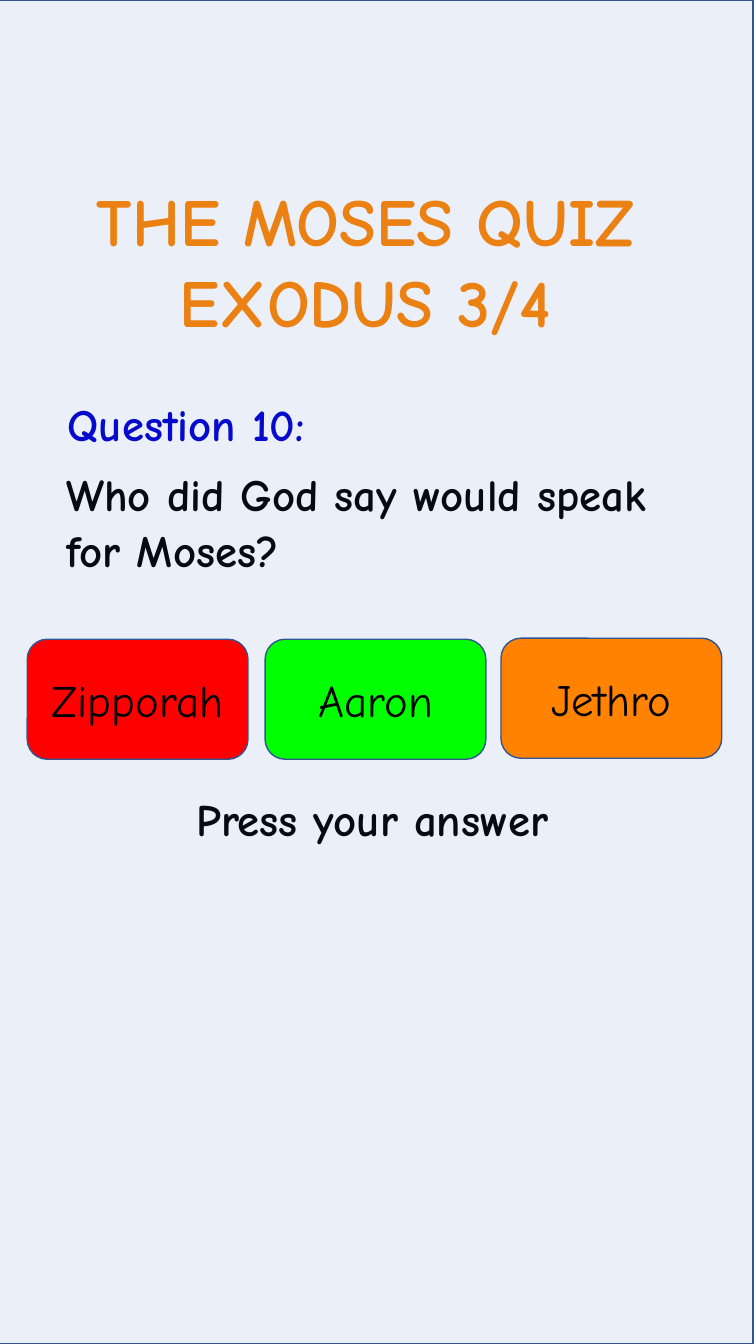
from lxml import etree
from pptx import Presentation
from pptx.dml.color import RGBColor
from pptx.enum.shapes import MSO_SHAPE
from pptx.enum.text import MSO_ANCHOR, PP_ALIGN
from pptx.oxml.ns import qn
from pptx.util import Inches, Pt

LEFT, CENTER = PP_ALIGN.LEFT, PP_ALIGN.CENTER
TOP, MIDDLE = MSO_ANCHOR.TOP, MSO_ANCHOR.MIDDLE
RECTANGLE, ROUNDED = MSO_SHAPE.RECTANGLE, MSO_SHAPE.ROUNDED_RECTANGLE

BLACK = RGBColor(0x00, 0x00, 0x00)
RED = RGBColor(0xFF, 0x00, 0x00)
GREEN = RGBColor(0x00, 0xFF, 0x00)
ORANGE = RGBColor(0xFF, 0x82, 0x00)
BLUE = RGBColor(0x00, 0x00, 0xCC)
TINT = RGBColor(0x44, 0x72, 0xC4)
BORDER = RGBColor(0x32, 0x54, 0x91)
FONT = "Comic Neue"

# Content
PAGE_SIZE = (7.5, 13.33)
TITLE = ["THE MOSES QUIZ ", "EXODUS 3/4 "]
QUESTION_LABEL = ["Question 10:"]
QUESTION = ["Who did God say would speak for Moses?"]
PROMPT = ["Press your answer"]
ANSWERS = [("Zipporah", RED, 0.27, 6.34), ("Aaron", GREEN, 2.63, 6.34),
           ("Jethro", ORANGE, 4.97, 6.33)]
ANSWER_SIZE = (2.19, 1.19)


def write(shape, lines, size=32, color=BLACK, bold=True, align=LEFT,
          anchor=TOP, wrap=True, spacing=None, before=0):
    frame = shape.text_frame
    frame.word_wrap = wrap
    frame.vertical_anchor = anchor
    for index, line in enumerate(lines):
        para = frame.add_paragraph() if index else frame.paragraphs[0]
        para.alignment = align
        para.space_before = Pt(before)
        if spacing is not None:
            para.line_spacing = spacing
        span = para.add_run()
        span.text = line
        span.font.name = FONT
        span.font.size = Pt(size)
        span.font.bold = bold
        span.font.color.rgb = color


def add_text(page, area, lines, **style):
    box = page.shapes.add_textbox(*map(Inches, area))
    write(box, lines, **style)


def add_panel(page, kind, area, color):
    panel = page.shapes.add_shape(kind, *map(Inches, area))
    panel.shadow.inherit = False
    panel.fill.solid()
    panel.fill.fore_color.rgb = color
    panel.line.color.rgb = BORDER
    panel.line.width = Pt(1)
    return panel


def main():
    deck = Presentation()
    deck.slide_width, deck.slide_height = map(Inches, PAGE_SIZE)
    page = deck.slides.add_slide(deck.slide_layouts[6])

    # Title and question
    add_text(page, (0.3, 1.73, 6.89, 1.72), TITLE, size=48, color=ORANGE,
             align=CENTER, wrap=False)
    add_text(page, (0.33, 3.89, 3.04, 0.64), QUESTION_LABEL, color=BLUE,
             align=CENTER, wrap=False)
    add_text(page, (0.56, 4.56, 6.36, 1.46), QUESTION, spacing=Pt(40), before=7.5)
    add_text(page, (1.85, 7.86, 4.22, 0.72), PROMPT, spacing=0.9, before=7.5)

    # Translucent tint over the page
    tint = add_panel(page, RECTANGLE, (-0.03, 0, *PAGE_SIZE), TINT)
    tint_color = tint.fill._xPr.find(qn("a:solidFill"))[0]
    etree.SubElement(tint_color, qn("a:alpha")).set("val", "10000")

    # Answer buttons
    for answer, color, left, top in ANSWERS:
        button = add_panel(page, ROUNDED, (left, top, *ANSWER_SIZE), color)
        write(button, [answer], bold=False, align=CENTER, anchor=MIDDLE)

    deck.save("out.pptx")


if __name__ == "__main__":
    main()
